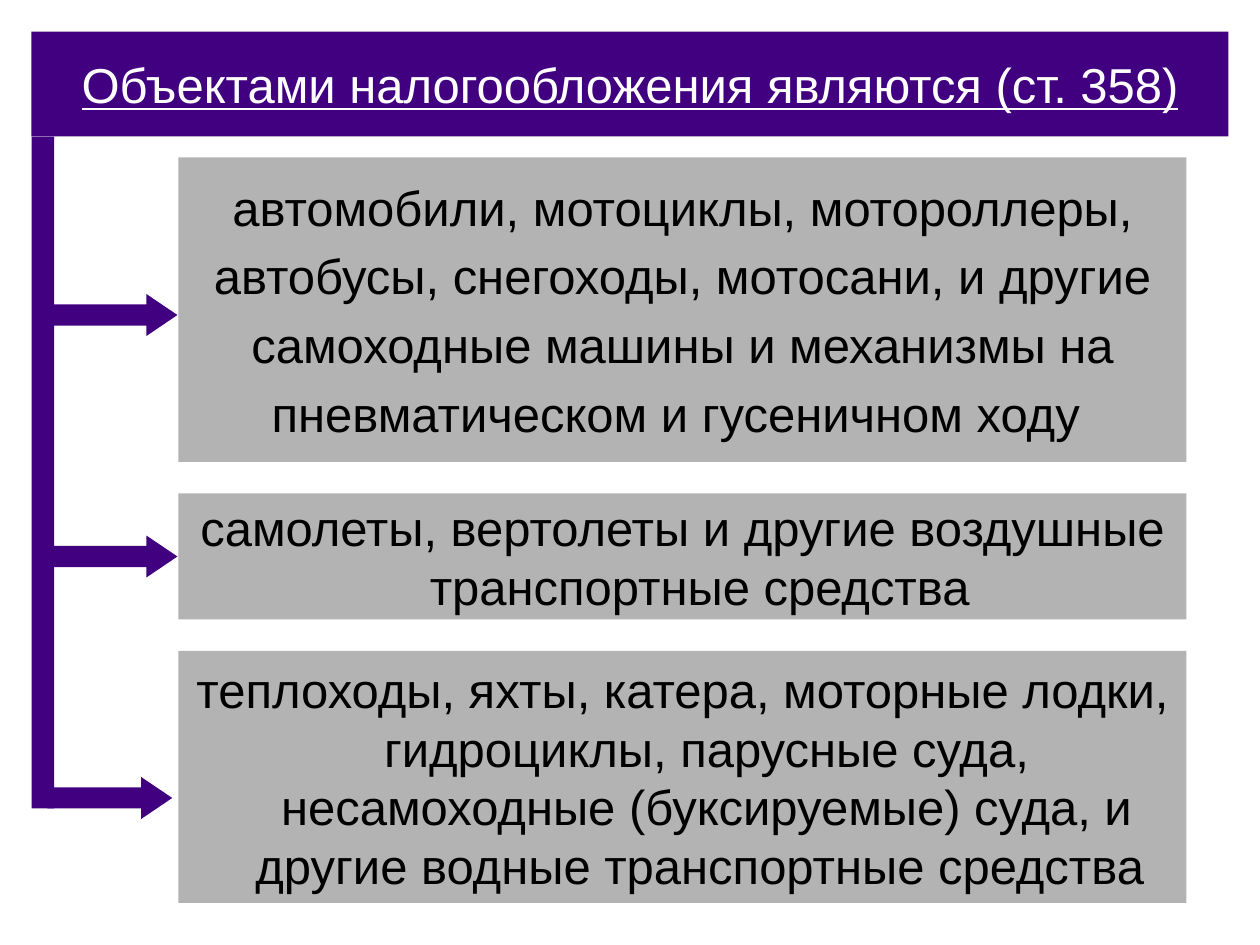
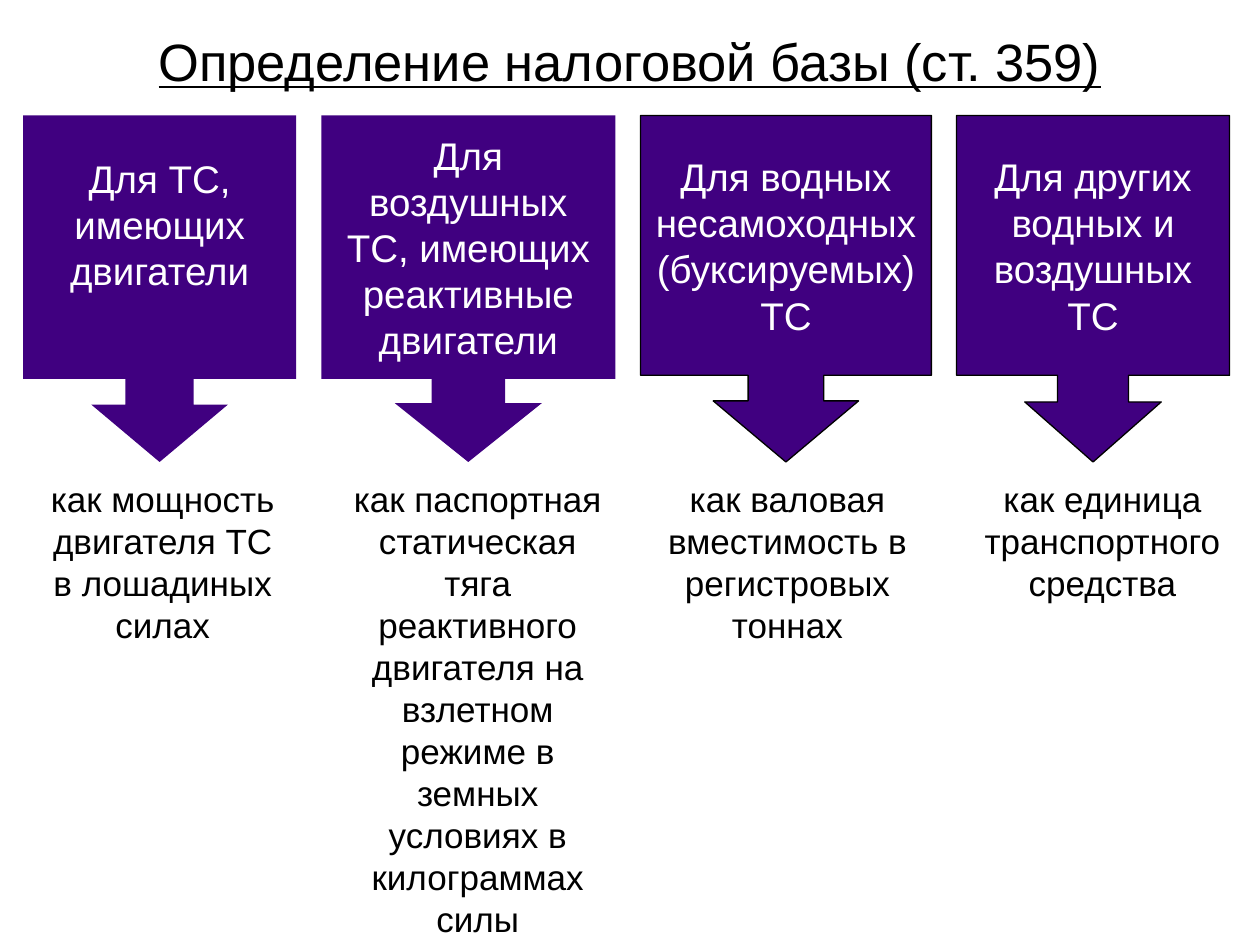
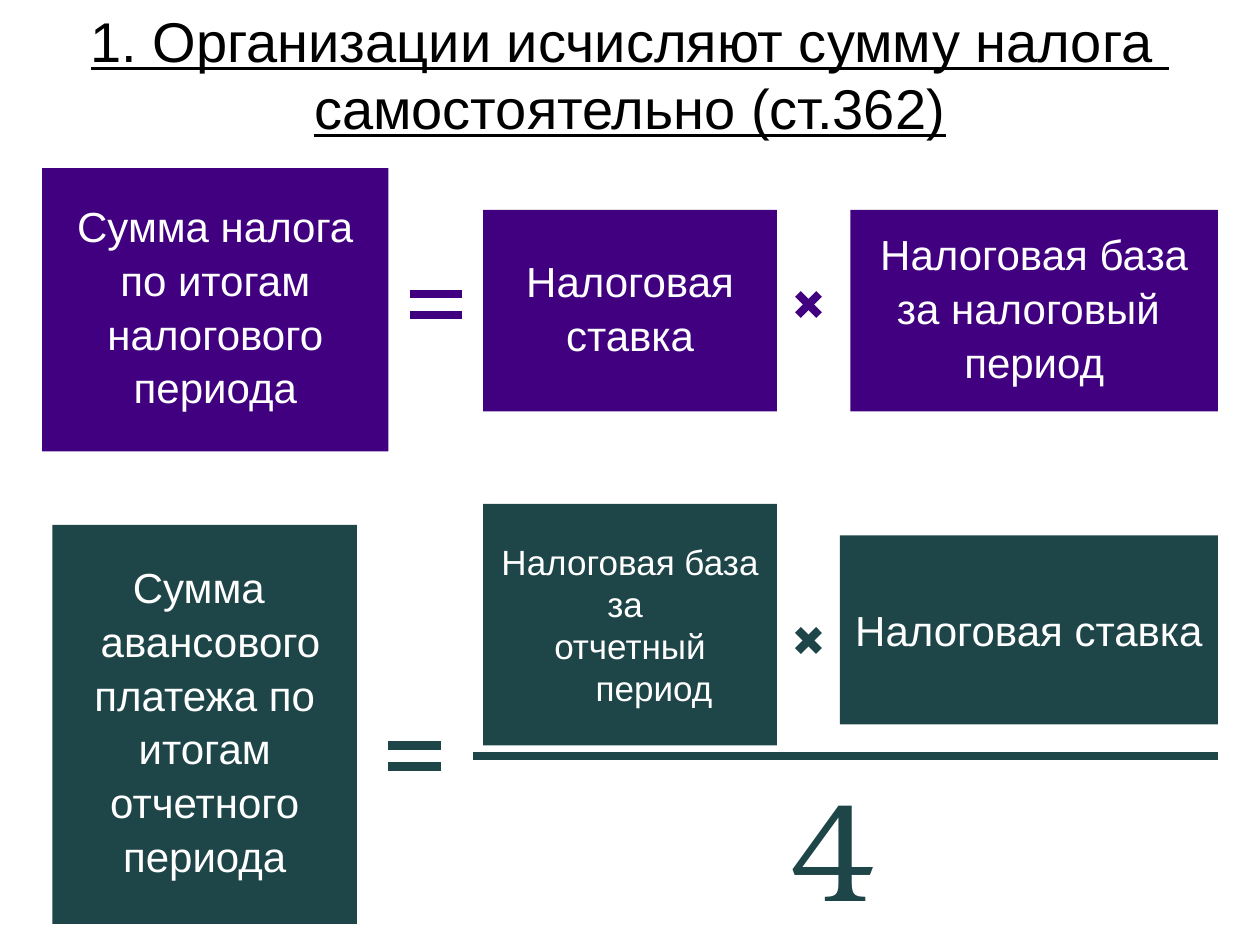
"""Build three slides on the transport tax: objects, tax base and calculation."""
from dataclasses import dataclass

from lxml.etree import SubElement
from pptx import Presentation
from pptx.dml.color import RGBColor
from pptx.enum.shapes import MSO_CONNECTOR as Connector, MSO_SHAPE as Shape
from pptx.enum.text import MSO_ANCHOR as Anchor, PP_ALIGN as Align
from pptx.oxml.ns import qn
from pptx.util import Inches, Pt


@dataclass(frozen=True)
class Theme:
    purple: RGBColor = RGBColor.from_string("400080")
    teal: RGBColor = RGBColor.from_string("1E4649")
    gray: RGBColor = RGBColor.from_string("B3B3B3")
    black: RGBColor = RGBColor.from_string("000000")
    white: RGBColor = RGBColor.from_string("FFFFFF")
    font: str = "Arial"
    digit_font: str = "TeX Gyre Bonum"
    band_size: int = 28
    title_size: int = 30
    large_title_size: int = 32
    callout_size: int = 22
    formula_size: int = 24
    note_size: int = 20
    digit_size: int = 80


theme = Theme()
presentation = Presentation()
presentation.slide_width, presentation.slide_height = Inches(10), Inches(7.5)
cell = presentation.slide_width / 120
hanging = Inches(0.38)


def add_block(slide, box, lines=(), size=0, color=theme.black, kind=None, fill=None,
              outline=None, adjustments=(), wrap=True, underline=False,
              name=theme.font, hang=False, gap=0, spacing=None):
    """Place a shape or a text box on the grid and write its paragraphs."""
    place = [round(value * cell) for value in box]
    if kind is None:
        shape = slide.shapes.add_textbox(*place)
    else:
        shape = slide.shapes.add_shape(kind, *place)
        shape.shadow.inherit = False
        shape.fill.solid()
        shape.fill.fore_color.rgb = fill
        if outline is None:
            shape.line.fill.background()
        else:
            shape.line.color.rgb = outline
            shape.line.width = Pt(0.75)
    for index, value in enumerate(adjustments):
        shape.adjustments[index] = value
    frame = shape.text_frame
    frame.word_wrap = wrap
    frame.vertical_anchor = Anchor.MIDDLE
    for index, line in enumerate(lines):
        paragraph = frame.add_paragraph() if index else frame.paragraphs[0]
        run = paragraph.add_run()
        run.text = line
        run.font.color.rgb = color
        for key, value in {"name": name, "size": Pt(size), "underline": underline}.items():
            setattr(run.font, key, value)
        paragraph.alignment = Align.CENTER
        if spacing:
            paragraph.line_spacing = spacing
        if gap and index:
            paragraph.space_before = Pt(gap * size)
        if hang:
            properties = paragraph._p.get_or_add_pPr()
            properties.set("marL", str(hanging))
            properties.set("indent", str(-hanging))
    return shape


def add_rule(slide, ends, color, width):
    """Draw a straight line between two grid points."""
    rule = slide.shapes.add_connector(Connector.STRAIGHT, *[round(value * cell) for value in ends])
    rule.line.color.rgb = color
    rule.line.width = Pt(width)
    SubElement(rule._element.spPr, qn("a:effectLst"))


blank = presentation.slide_layouts[6]
objects_slide, base_slide, sum_slide = [presentation.slides.add_slide(blank) for _ in range(3)]

vehicle_groups = [
    (15, 29, ["автомобили, мотоциклы, мотороллеры,",
              "автобусы, снегоходы, мотосани, и другие",
              "самоходные машины и механизмы на",
              "пневматическом и гусеничном ходу "]),
    (47, 12, ["самолеты, вертолеты и другие воздушные транспортные средства "]),
    (62, 24, ["теплоходы, яхты, катера, моторные лодки, гидроциклы, парусные суда, "
              "несамоходные (буксируемые) суда, и другие водные транспортные средства "]),
]
for top, height, lines in vehicle_groups:
    add_block(objects_slide, (17, top, 96, height), lines, theme.band_size,
              kind=Shape.RECTANGLE, fill=theme.gray, hang=True, gap=0.2)
add_block(objects_slide, (3, 3, 114, 10), ["Объектами налогообложения являются (ст. 358)"],
          theme.band_size, theme.white, Shape.RECTANGLE, theme.purple, wrap=False, underline=True)
add_block(objects_slide, (3, 13, 2.16, 64), kind=Shape.RECTANGLE, fill=theme.purple)
for left, top in [(5, 28), (5, 51), (4.5, 74)]:
    add_block(objects_slide, (left, top, 11.9, 4), kind=Shape.RIGHT_ARROW,
              fill=theme.purple, adjustments=(0.5, 0.74))

add_block(base_slide, (6, 2, 108, 7.5), ["Определение налоговой базы (ст. 359)"],
          theme.title_size, underline=True)
plain = {"outline": None, "neck": 0.25, "body": 0.76}
outlined = {"outline": theme.black, "neck": 0.26, "body": 0.75}
tax_bases = [
    (2.2, 26, 0.21, plain, "Для ТС, имеющих двигатели",
     (3, 25, 17), "как мощность двигателя ТС в лошадиных силах"),
    (30.6, 28, 0.2, plain, "Для воздушных ТС, имеющих реактивные двигатели",
     (32, 27, 45), "как паспортная статическая тяга реактивного двигателя на взлетном "
                   "режиме в земных условиях в килограммах силы"),
    (61, 27.7, 0.21, outlined, "Для водных несамоходных (буксируемых) ТС",
     (62, 26, 17), "как валовая вместимость в регистровых тоннах"),
    (91.1, 26, 0.22, outlined, "Для других водных и воздушных ТС",
     (92, 26, 13), "как единица транспортного средства"),
]
callouts = []
for left, width, head, style, heading, (note_left, note_width, note_height), note in tax_bases:
    callouts.append(add_block(
        base_slide, (left, 11, width, 33), [heading], theme.callout_size, theme.white,
        Shape.DOWN_ARROW_CALLOUT, theme.purple, style["outline"],
        (style["neck"], 0.25, head, style["body"])))
    add_block(base_slide, (note_left, 45, note_width, note_height), [note], theme.note_size)
callouts[0].text_frame.margin_bottom = Inches(0.42)

spaced = {"size": theme.formula_size, "gap": 0.2, "spacing": 0.9}
formula_blocks = [
    ((4, 16, 33, 27), theme.purple, spaced,
     ["Сумма налога", "по итогам", "налогового", "периода"]),
    ((46, 20, 28, 19.2), theme.purple, spaced, ["Налоговая", "ставка"]),
    ((81, 20, 35, 19.2), theme.purple, spaced, ["Налоговая база", "за налоговый ", "период"]),
    ((5, 50, 29, 38), theme.teal, spaced,
     ["Сумма ", " авансового", " платежа по ", "итогам", "отчетного", "периода"]),
    ((46, 48, 28, 23), theme.teal, {"size": theme.note_size},
     ["Налоговая база", "за ", "отчетный период"]),
    ((80, 51, 36, 18), theme.teal, {"size": theme.formula_size}, ["Налоговая ставка"]),
]
for box, fill, style, lines in formula_blocks:
    add_block(sum_slide, box, lines, color=theme.white, kind=Shape.RECTANGLE,
              fill=fill, hang=True, **style)
for color, width, equals_left, equals_top, times_top in [
    (theme.purple, 4.5, 39, 28, 28),
    (theme.teal, 4.75, 37, 71, 60),
]:
    for step in (0, 2):
        level = equals_top + step
        add_rule(sum_slide, (equals_left, level, equals_left + 5, level), color, width)
        add_rule(sum_slide, (76, times_top + step, 78, times_top + 2 - step), color, width)
add_rule(sum_slide, (45, 72, 116, 72), theme.teal, 4.75)
add_block(sum_slide, (74, 76, 10, 9), ["4"], theme.digit_size, theme.teal,
          wrap=False, name=theme.digit_font)
add_block(sum_slide, (2, 2, 116, 10),
          ["1. Организации исчисляют сумму налога ", "самостоятельно (ст.362)"],
          theme.large_title_size, wrap=False, underline=True)

presentation.save("out.pptx")
